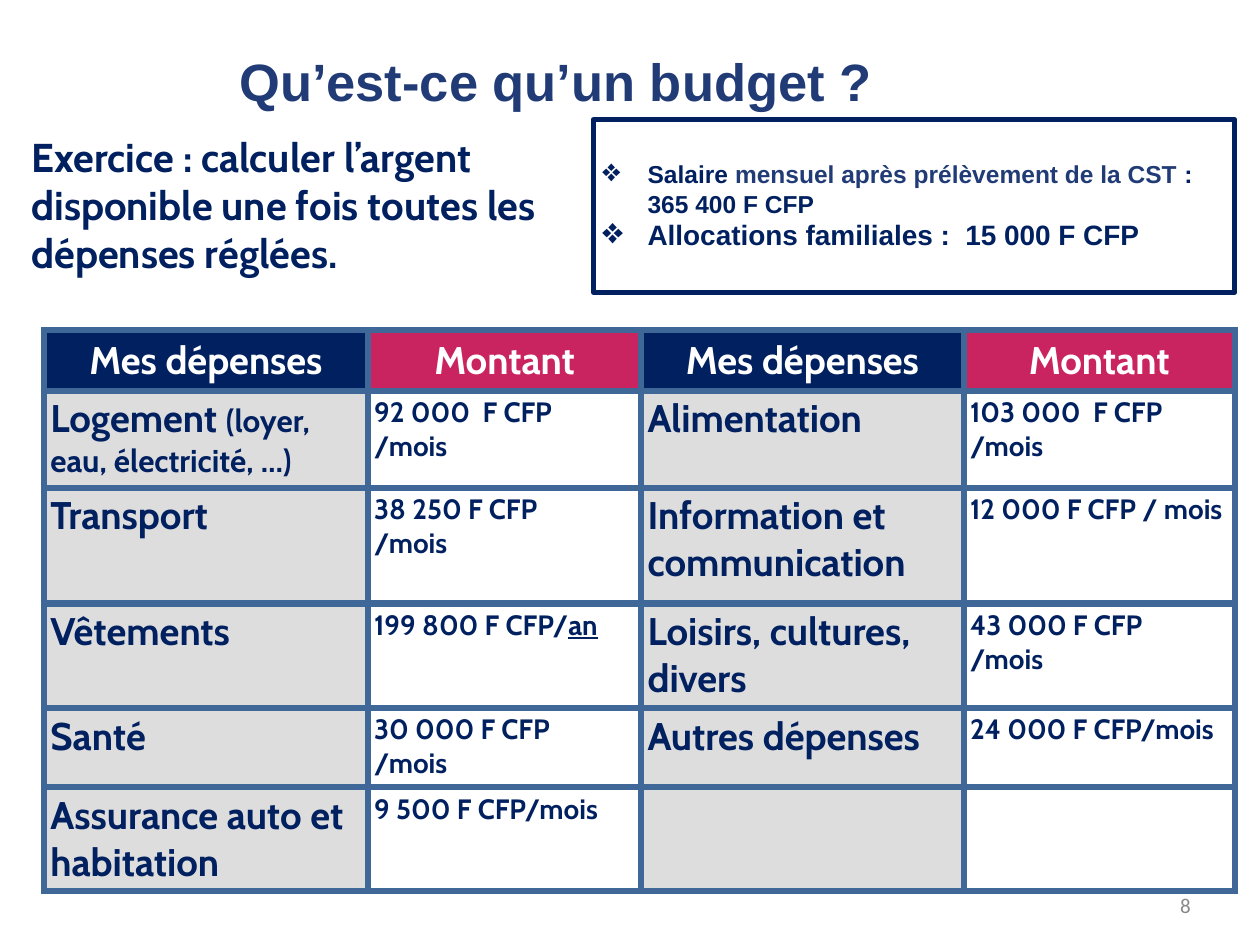
from lxml import etree
from pptx import Presentation
from pptx import util as u
from pptx.dml.color import RGBColor
from pptx.enum import shapes, text
from pptx.oxml import ns

COLORS = {
    "navy": "002060", "ink": "213B76", "pink": "C92360", "grey": "DDDDDD",
    "white": "FFFFFF", "border": "3F6797", "number": "888888",
}
LEFT, CENTER, RIGHT = text.PP_ALIGN.LEFT, text.PP_ALIGN.CENTER, text.PP_ALIGN.RIGHT
TOP, MIDDLE = text.MSO_ANCHOR.TOP, text.MSO_ANCHOR.MIDDLE


def rgb(name):
    return RGBColor.from_string(COLORS[name])


def inches(*values):
    return [u.Inches(value) for value in values]


class SlideBuilder:
    margin = u.Inches(0.05)
    cell_margins = {"left": 0.05, "right": 0.05, "top": 0.04, "bottom": 0.04}
    border_width = u.Pt(4)

    def __init__(self, slide):
        self.slide = slide

    def run(self, paragraph, words, color="navy", **font):
        run = paragraph.add_run()
        run.text = words
        for name, value in {"name": "Cabin", "bold": True, **font}.items():
            setattr(run.font, name, value)
        run.font.color.rgb = rgb(color)

    def fill_text(self, frame, paragraphs, align=LEFT):
        """Each paragraph is a list of (words, font values) runs."""
        for index, runs in enumerate(paragraphs):
            paragraph = frame.paragraphs[0] if index == 0 else frame.add_paragraph()
            paragraph.alignment = align
            for words, font in runs:
                self.run(paragraph, words, **font)

    def format_frame(self, frame, anchor):
        values = {
            "word_wrap": True, "vertical_anchor": anchor,
            "auto_size": text.MSO_AUTO_SIZE.NONE,
            "margin_left": self.margin, "margin_right": self.margin,
            "margin_top": self.margin, "margin_bottom": self.margin,
        }
        for name, value in values.items():
            setattr(frame, name, value)

    def title(self, box, words, **font):
        shape = self.slide.shapes.title
        shape.left, shape.top, shape.width, shape.height = inches(*box)
        self.format_frame(shape.text_frame, TOP)
        self.fill_text(shape.text_frame, [[(words, font)]], CENTER)

    def textbox(self, box, paragraphs, align=LEFT, anchor=TOP, parent=None):
        shape = (parent or self.slide).shapes.add_textbox(*inches(*box))
        self.format_frame(shape.text_frame, anchor)
        self.fill_text(shape.text_frame, paragraphs, align)
        return shape.text_frame

    def outline(self, box, parent):
        shape = parent.shapes.add_shape(shapes.MSO_SHAPE.RECTANGLE, *inches(*box))
        shape.shadow.inherit = False
        shape.fill.background()
        shape.line.color.rgb = rgb("navy")
        shape.line.width = u.Pt(3)

    def bullet(self, paragraph, margin=0.38, hanging=0.36):
        properties = paragraph._p.get_or_add_pPr()
        properties.set("marL", str(u.Inches(margin)))
        properties.set("indent", str(-u.Inches(hanging)))
        etree.SubElement(properties, ns.qn("a:buSzPct")).set("val", "130000")
        etree.SubElement(properties, ns.qn("a:buChar")).set("char", "❖")

    def border(self, cell):
        properties = cell._tc.get_or_add_tcPr()
        for index, side in enumerate(("a:lnL", "a:lnR", "a:lnT", "a:lnB")):
            line = etree.Element(ns.qn(side), w=str(self.border_width))
            fill = etree.SubElement(line, ns.qn("a:solidFill"))
            etree.SubElement(fill, ns.qn("a:srgbClr"), val=COLORS["border"])
            properties.insert(index, line)

    def table(self, left, top, widths, heights, rows, fills):
        frame = self.slide.shapes.add_table(
            len(heights), len(widths),
            *inches(left, top, sum(widths), sum(heights)))
        table = frame.table
        for column, width in zip(table.columns, widths):
            column.width = u.Inches(width)
        for row, height in zip(table.rows, heights):
            row.height = u.Inches(height)
        for row_index, row in enumerate(rows):
            header = row_index == 0
            for column_index, paragraphs in enumerate(row):
                cell = table.cell(row_index, column_index)
                for side, value in self.cell_margins.items():
                    setattr(cell, f"margin_{side}", u.Inches(value))
                cell.vertical_anchor = MIDDLE if header else TOP
                cell.fill.solid()
                cell.fill.fore_color.rgb = rgb(fills[header][column_index % 2])
                self.border(cell)
                self.fill_text(cell.text_frame, paragraphs, CENTER if header else LEFT)


def heading(words):
    return [[(words, {"size": u.Pt(22), "color": "white"})]]


def label(words, detail=""):
    runs = [(words, {"size": u.Pt(22)})]
    if detail:
        runs.append((detail, {"size": u.Pt(18)}))
    return [runs]


def amount(*lines):
    return [[(line, {"size": u.Pt(16)})] for line in lines]


def main():
    presentation = Presentation()
    presentation.slide_width, presentation.slide_height = inches(10, 7.5)
    slide = presentation.slides.add_slide(presentation.slide_layouts[5])
    builder = SlideBuilder(slide)

    # Title and exercise
    builder.title((0.59, 0.34, 7.64, 0.61), "Qu’est-ce qu’un budget ?",
                  name="Arial", size=u.Pt(30), color="ink")
    exercise = builder.textbox((0.2, 1, 4.39, 1.26), [[(
        "Exercice : calculer l’argent disponible une fois toutes les dépenses réglées.",
        {"size": u.Pt(23)})]])
    exercise.paragraphs[0].space_before = u.Pt(5)

    # Income box
    income = slide.shapes.add_group_shape()
    builder.outline((4.71, 0.95, 5.09, 1.37), income)
    salary = {"name": "Arial", "size": u.Pt(14)}
    frame = builder.textbox((4.71, 1.21, 4.92, 0.84), [
        [("Salaire ", salary),
         ("mensuel après prélèvement de la CST ", {**salary, "color": "ink"}),
         (": 365 400 F CFP", salary)],
        [("Allocations familiales :  15 000 F CFP", {**salary, "size": u.Pt(16)})],
    ], anchor=MIDDLE, parent=income)
    for paragraph in frame.paragraphs:
        builder.bullet(paragraph)

    # Expenses table
    yearly = amount("199 800 F CFP/")
    yearly[0].append(("an", {"size": u.Pt(16), "underline": True}))
    rows = [
        [heading("Mes dépenses"), heading("Montant")] * 2,
        [label("Logement ", "(loyer, eau, électricité, …)"),
         amount("92 000  F CFP", "/mois"),
         label("Alimentation"), amount("103 000  F CFP", "/mois")],
        [label("Transport"), amount("38 250 F CFP", "/mois"),
         label("Information et communication"), amount("12 000 F CFP / mois")],
        [label("Vêtements"), yearly,
         label("Loisirs, cultures, divers"), amount("43 000 F CFP", "/mois")],
        [label("Santé"), amount("30 000 F CFP", "/mois"),
         label("Autres dépenses"), amount("24 000 F CFP/mois")],
        [label("Assurance auto et habitation"), amount("9 500 F CFP/mois"), [], []],
    ]
    builder.table(0.35, 2.62, [2.57, 2.17, 2.56, 2.15],
                  [0.48, 0.77, 0.92, 0.83, 0.63, 0.82], rows,
                  {True: ("navy", "pink"), False: ("grey", "white")})

    # Slide number, just below the table
    builder.textbox((9.21, 7.04, 0.29, 0.29), [[(
        "8", {"name": "Calibri", "size": u.Pt(12), "bold": False, "color": "number"})]],
        align=RIGHT, anchor=MIDDLE)

    presentation.save("out.pptx")


if __name__ == "__main__":
    main()
